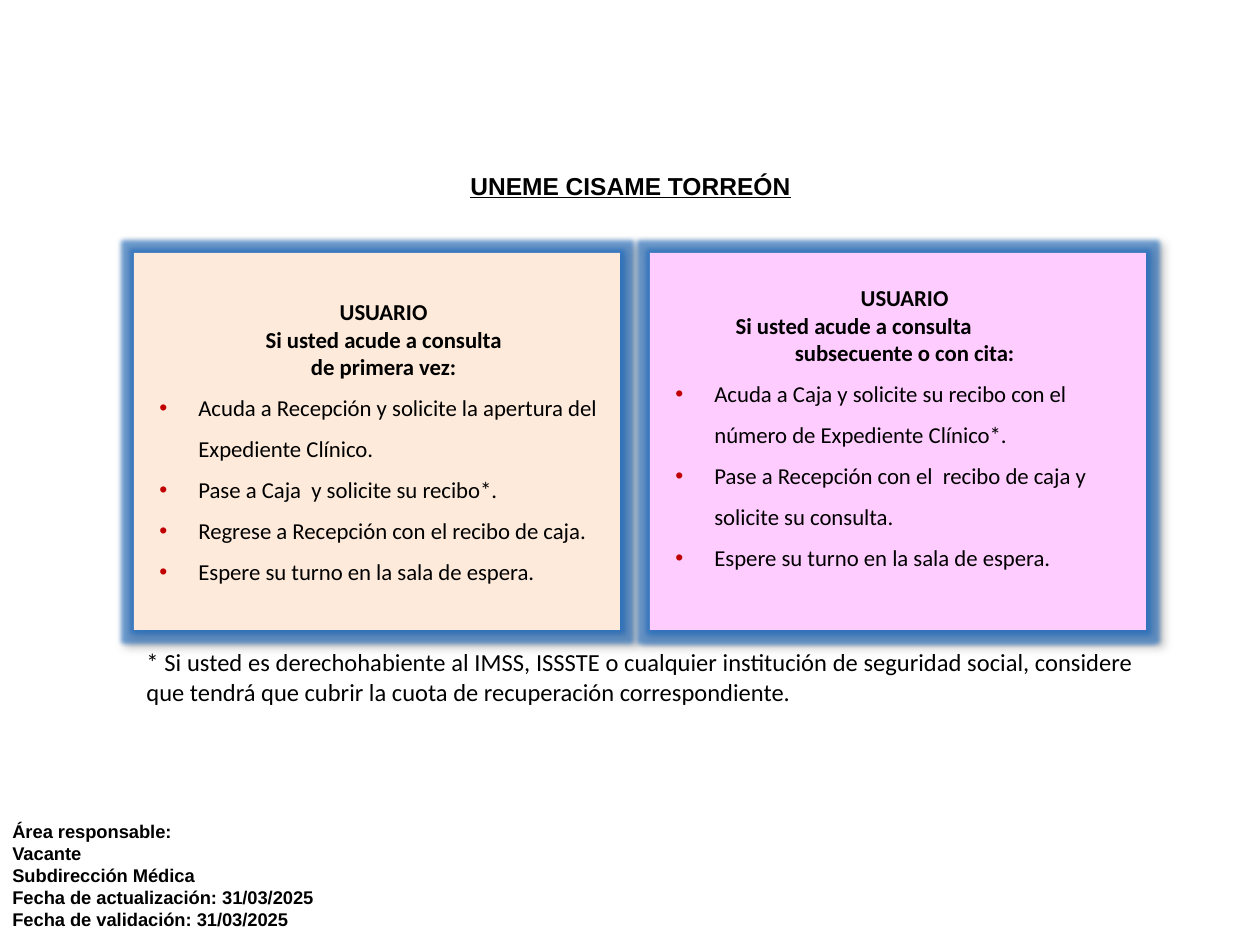
from lxml import etree
from pptx import Presentation
from pptx.dml.color import RGBColor
from pptx.enum.shapes import MSO_SHAPE
from pptx.enum.text import MSO_ANCHOR, PP_ALIGN
from pptx.oxml import parse_xml
from pptx.oxml.ns import nsdecls, qn
from pptx.util import Emu, Pt

BLACK = RGBColor(0x00, 0x00, 0x00)
PEACH = RGBColor(0xFD, 0xEA, 0xDA)
PINK = RGBColor(0xFF, 0xCC, 0xFF)
BULLET_RED = RGBColor(0xC0, 0x00, 0x00)
GLOW_BLUE = RGBColor(0x1F, 0x6B, 0xC0)

PIXELS_PER_INCH = 126
PANEL_TOP, PANEL_HEIGHT = 253, 377

FIRST_VISIT_HEADING = ["USUARIO", "Si usted acude a consulta", "de primera vez:"]
FIRST_VISIT_STEPS = [
    "Acuda a Recepción y solicite la apertura del Expediente Clínico.",
    "Pase a Caja  y solicite su recibo*.",
    "Regrese a Recepción con el recibo de caja.",
    "Espere su turno en la sala de espera.",
]
FOLLOW_UP_HEADING = ["USUARIO", "Si usted acude a consulta", "subsecuente o con cita:"]
FOLLOW_UP_STEPS = [
    "Acuda a Caja y solicite su recibo con el número de Expediente Clínico*.",
    "Pase a Recepción con el  recibo de caja y solicite su consulta.",
    "Espere su turno en la sala de espera.",
]
FOOTNOTE = (
    "* Si usted es derechohabiente al IMSS, ISSSTE o cualquier institución de "
    "seguridad social, considere que tendrá que cubrir la cuota de recuperación "
    "correspondiente."
)
RESPONSIBLE_AREA = [
    "Área responsable:",
    "Vacante",
    "Subdirección Médica",
    "Fecha de actualización: 31/03/2025",
    "Fecha de validación: 31/03/2025",
]


def px(length):
    return Emu(round(length * 914400 / PIXELS_PER_INCH))


def format_paragraph(paragraph, font_name, size, bold=False, align=PP_ALIGN.LEFT):
    paragraph.alignment = align
    for run in paragraph.runs:
        run.font.name, run.font.size, run.font.bold = font_name, Pt(size), bold
        run.font.color.rgb = BLACK


def set_indent(paragraph, left, first_line=0, right=0):
    properties = paragraph._p.get_or_add_pPr()
    properties.set("marL", str(px(left)))
    properties.set("indent", str(px(first_line)))
    properties.set("marR", str(px(right)))


def add_bullet(paragraph):
    properties = paragraph._p.get_or_add_pPr()
    color = etree.SubElement(properties, qn("a:buClr"))
    etree.SubElement(color, qn("a:srgbClr"), val=str(BULLET_RED))
    etree.SubElement(properties, qn("a:buFont"), typeface="Arial")
    etree.SubElement(properties, qn("a:buChar"), char="•")


def add_glow_and_shadow(shape):
    shape._element.spPr.append(parse_xml(
        f'<a:effectLst {nsdecls("a")}>'
        f'<a:glow rad="{Pt(5)}"><a:srgbClr val="{GLOW_BLUE}">'
        '<a:alpha val="60000"/></a:srgbClr></a:glow>'
        f'<a:outerShdw blurRad="{Pt(4)}" dist="{Pt(3)}" dir="2700000" algn="tl">'
        '<a:srgbClr val="000000"><a:alpha val="40000"/></a:srgbClr>'
        '</a:outerShdw></a:effectLst>'
    ))


def set_title(slide, text):
    title = slide.shapes.title
    title.left, title.top, title.width, title.height = px(134), px(135), px(993), px(89)
    frame = title.text_frame
    frame.text = text
    frame.vertical_anchor = MSO_ANCHOR.BOTTOM
    frame.margin_bottom = px(24)
    format_paragraph(frame.paragraphs[0], "Arial", 14, True, PP_ALIGN.CENTER)
    frame.paragraphs[0].runs[0].font.underline = True


def add_text(slide, left, top, width, height, lines, font_name, size, bold, align):
    box = slide.shapes.add_textbox(px(left), px(top), px(width), px(height))
    frame = box.text_frame
    frame.word_wrap = True
    frame.text = "\n".join(lines)
    for paragraph in frame.paragraphs:
        format_paragraph(paragraph, font_name, size, bold, align)


def add_panel(slide, left, width, fill, heading, steps, second_line_right=0, bottom_margin=6):
    panel = slide.shapes.add_shape(
        MSO_SHAPE.RECTANGLE, px(left), px(PANEL_TOP), px(width), px(PANEL_HEIGHT))
    panel.fill.solid()
    panel.fill.fore_color.rgb = fill
    panel.line.fill.background()
    add_glow_and_shadow(panel)

    frame = panel.text_frame
    frame.word_wrap = True
    frame.vertical_anchor = MSO_ANCHOR.MIDDLE
    frame.margin_bottom = px(bottom_margin)
    frame.text = "\n".join(heading + steps)
    for index, paragraph in enumerate(frame.paragraphs):
        if index < len(heading):
            set_indent(paragraph, 13, right=second_line_right if index == 1 else 0)
            format_paragraph(paragraph, "Calibri", 13, True, PP_ALIGN.CENTER)
        else:
            set_indent(paragraph, 52, -39)
            paragraph.line_spacing = 1.5
            add_bullet(paragraph)
            format_paragraph(paragraph, "Calibri", 13)


def main():
    presentation = Presentation()
    presentation.slide_width, presentation.slide_height = px(1260), px(945)
    slide = presentation.slides.add_slide(presentation.slide_layouts[5])

    # Responsible area and dates
    add_text(slide, 0, 814, 466, 123, RESPONSIBLE_AREA, "Arial", 10.5, True, PP_ALIGN.LEFT)

    # Title
    set_title(slide, "UNEME CISAME TORREÓN")

    # Instructions for each kind of visit
    add_panel(slide, 134, 486, PEACH, FIRST_VISIT_HEADING, FIRST_VISIT_STEPS)
    add_panel(slide, 650, 496, PINK, FOLLOW_UP_HEADING, FOLLOW_UP_STEPS,
              second_line_right=102, bottom_margin=34)

    # Footnote
    add_text(slide, 134, 641, 1012, 72, [FOOTNOTE], "Calibri", 14, False, PP_ALIGN.JUSTIFY)

    presentation.save("out.pptx")


if __name__ == "__main__":
    main()
